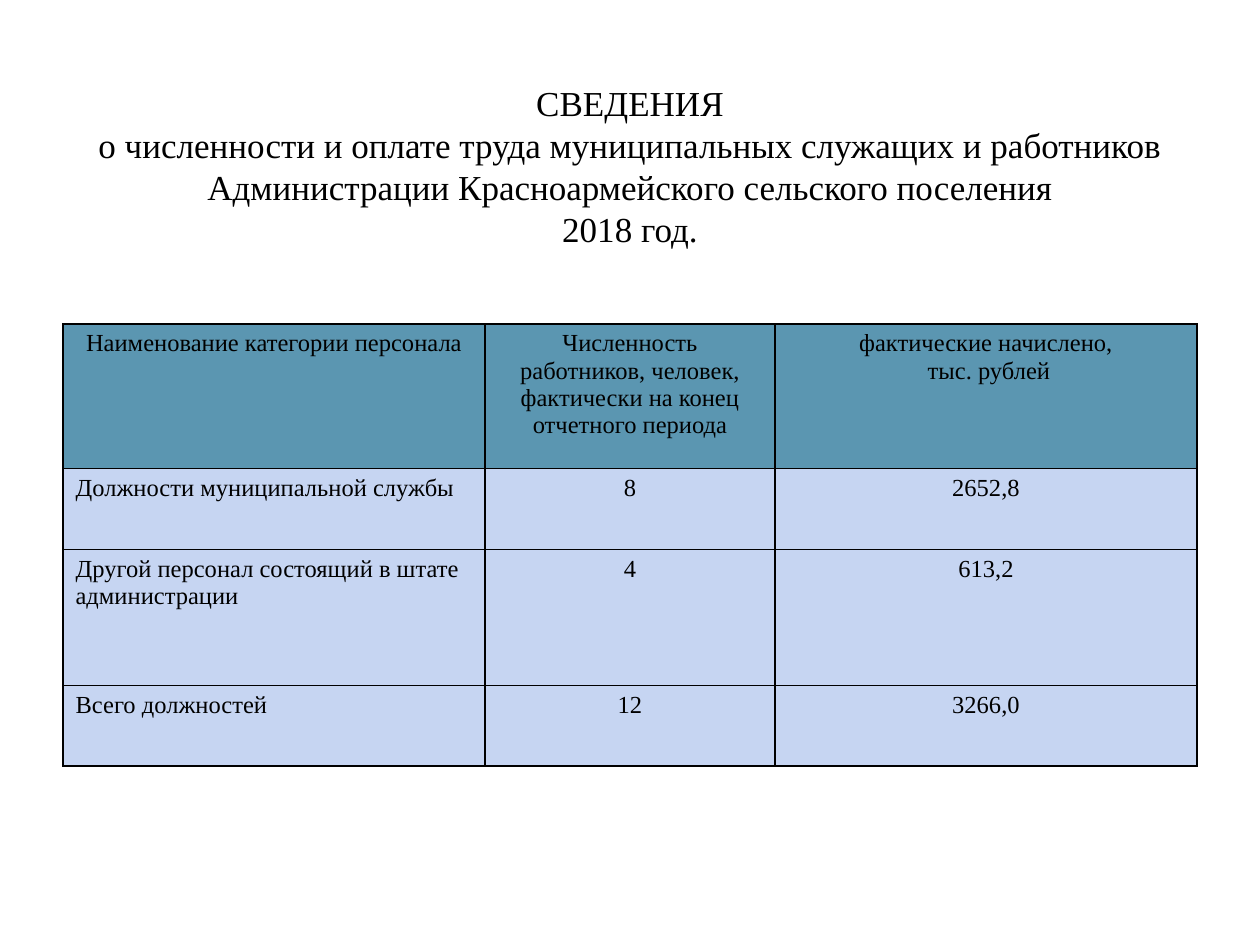
from lxml import etree
from pptx import Presentation
from pptx.dml.color import RGBColor
from pptx.enum.text import MSO_ANCHOR, PP_ALIGN
from pptx.oxml.ns import qn
from pptx.util import Inches, Pt

CENTER, LEFT = PP_ALIGN.CENTER, PP_ALIGN.LEFT
MIDDLE = MSO_ANCHOR.MIDDLE
FONT = "Times New Roman"
TITLE_ONLY = 5
COLORS = {"text": "000000", "border": "000000", "header": "5B96B1", "body": "C6D5F2"}

# A vertical tab is a line break inside the paragraph.
TITLE = (
    "СВЕДЕНИЯ\v"
    "о численности и оплате труда муниципальных служащих и работников "
    "Администрации Красноармейского сельского поселения\v"
    "2018 год."
)
STAFF_ROWS = [
    (
        "Наименование категории персонала",
        "Численность работников, человек,\nфактически на конец отчетного периода",
        "фактические начислено,\n тыс. рублей",
    ),
    ("Должности муниципальной службы", "8", "2652,8"),
    ("Другой персонал состоящий в штате администрации", "4", "613,2"),
    ("Всего должностей", "12", "3266,0"),
]
COLUMN_WIDTHS = [3.35, 2.3, 3.35]
ROW_HEIGHTS = [1.15, 0.64, 1.08, 0.64]


def format_paragraph(paragraph, size, alignment):
    paragraph.alignment = alignment
    paragraph.font.name = FONT
    paragraph.font.size = Pt(size)
    paragraph.font.color.rgb = RGBColor.from_string(COLORS["text"])


def add_title(slide):
    title = slide.shapes.title
    title.left, title.top = Inches(0.5), Inches(0.3)
    title.width, title.height = Inches(9), Inches(2.03)
    frame = title.text_frame
    frame.text = TITLE
    frame.word_wrap = True
    frame.vertical_anchor = MIDDLE
    heading = frame.paragraphs[0]
    format_paragraph(heading, 20, CENTER)
    heading.line_spacing = Pt(24)


def set_borders(cell):
    properties = cell._tc.get_or_add_tcPr()
    for position, side in enumerate(("a:lnL", "a:lnR", "a:lnT", "a:lnB")):
        line = etree.Element(qn(side), w=str(Pt(1)))
        fill = etree.SubElement(line, qn("a:solidFill"))
        etree.SubElement(fill, qn("a:srgbClr"), val=COLORS["border"])
        properties.insert(position, line)


def fill_cell(cell, text, color, alignment):
    cell.text = text
    for paragraph in cell.text_frame.paragraphs:
        format_paragraph(paragraph, 14, alignment)
    cell.fill.solid()
    cell.fill.fore_color.rgb = RGBColor.from_string(color)
    set_borders(cell)


def add_staff_table(slide):
    table = slide.shapes.add_table(
        len(ROW_HEIGHTS), len(COLUMN_WIDTHS), Inches(0.5), Inches(2.57),
        Inches(sum(COLUMN_WIDTHS)), Inches(sum(ROW_HEIGHTS)),
    ).table
    table.first_row = table.horz_banding = False
    for column, width in zip(table.columns, COLUMN_WIDTHS):
        column.width = Inches(width)
    for row, height in zip(table.rows, ROW_HEIGHTS):
        row.height = Inches(height)
    for r, texts in enumerate(STAFF_ROWS):
        color = COLORS["header" if r == 0 else "body"]
        for c, text in enumerate(texts):
            alignment = LEFT if r > 0 and c == 0 else CENTER
            fill_cell(table.cell(r, c), text, color, alignment)


def main():
    presentation = Presentation()
    presentation.slide_width, presentation.slide_height = Inches(10), Inches(7.5)
    slide = presentation.slides.add_slide(presentation.slide_layouts[TITLE_ONLY])
    add_title(slide)
    add_staff_table(slide)
    presentation.save("out.pptx")


if __name__ == "__main__":
    main()
